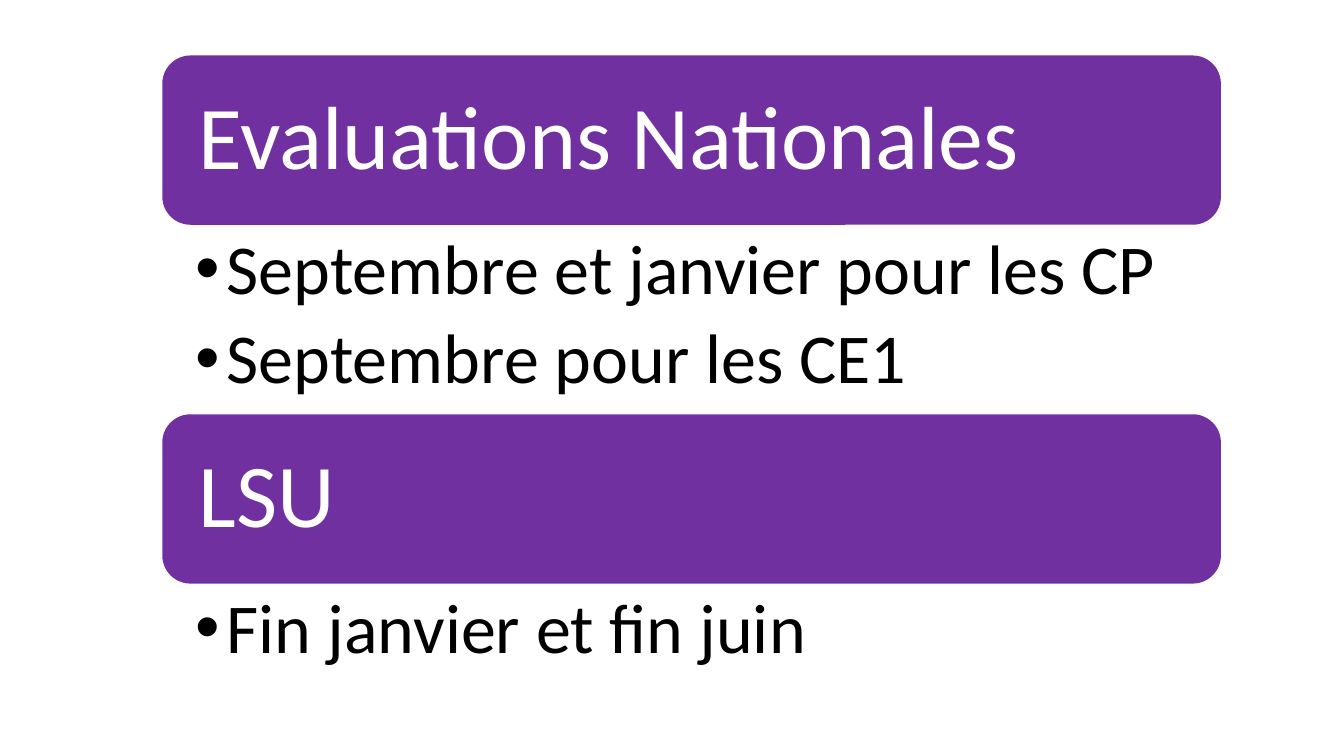
from dataclasses import dataclass

from lxml import etree
from pptx import Presentation
from pptx import util as u
from pptx.dml.color import RGBColor
from pptx.enum import shapes, text
from pptx.oxml import ns


@dataclass(frozen=True)
class Theme:
    font: str = "Calibri"
    purple: RGBColor = RGBColor(0x70, 0x30, 0xA0)
    white: RGBColor = RGBColor(255, 255, 255)
    black: RGBColor = RGBColor(0, 0, 0)
    heading_size: int = 64
    list_size: int = 50


THEME = Theme()
LEFT, TOP, WIDTH = 1.61, 0.55, 10.5
BAND_HEIGHT, BAND_INSET = 1.68, 0.09
SECTIONS = [
    (0, 2, "Evaluations Nationales",
     ["Septembre et janvier pour les CP", "Septembre pour les CE1"], 1.88),
    (3, 4, "LSU", ["Fin janvier et fin juin"], 1.16),
]


def apply(target, values):
    for name, value in values.items():
        setattr(target, name, value)


def place(shape, left, top, width, height):
    apply(shape, dict(left=u.Inches(left), top=u.Inches(top),
                      width=u.Inches(width), height=u.Inches(height)))


def write(shape, lines, frame_format, paragraph_format, font_format):
    frame = shape.text_frame
    frame.text = "\n".join(lines)
    apply(frame, dict(word_wrap=True, auto_size=text.MSO_AUTO_SIZE.NONE) | frame_format)
    for paragraph in frame.paragraphs:
        apply(paragraph, dict(alignment=text.PP_ALIGN.LEFT, line_spacing=0.9,
                              space_before=u.Pt(0)) | paragraph_format)
        for run in paragraph.runs:
            apply(run.font, dict(name=THEME.font, bold=False, size=font_format["size"]))
            run.font.color.rgb = font_format["color"]


def add_bullet(paragraph):
    properties = paragraph._p.get_or_add_pPr()
    properties.set("marL", str(u.Inches(0.31)))
    properties.set("indent", str(u.Inches(-0.31)))
    etree.SubElement(properties, ns.qn("a:buFont")).set("typeface", "Arial")
    etree.SubElement(properties, ns.qn("a:buChar")).set("char", "•")


def build_band(slide, heading, label, left, top, width, height):
    band = slide.shapes.add_shape(
        shapes.MSO_SHAPE.ROUNDED_RECTANGLE, u.Inches(left), u.Inches(top),
        u.Inches(width), u.Inches(height))
    band.shadow.inherit = False
    band.fill.solid()
    band.fill.fore_color.rgb = THEME.purple
    band.line.fill.background()
    heading.element.addprevious(band.element)
    place(heading, left + BAND_INSET, top + BAND_INSET,
          width - 2 * BAND_INSET, height - 2 * BAND_INSET)
    margin = u.Inches(0.27)
    write(heading, [label],
          dict(vertical_anchor=text.MSO_ANCHOR.MIDDLE, margin_left=margin,
               margin_right=margin, margin_top=margin, margin_bottom=margin),
          dict(space_after=u.Pt(0.35 * THEME.heading_size)),
          dict(size=u.Pt(THEME.heading_size), color=THEME.white))


def build_list(body, items, left, top, width, height):
    place(body, left, top, width, height)
    write(body, items,
          dict(vertical_anchor=text.MSO_ANCHOR.TOP,
               margin_left=u.Inches(0.33), margin_right=u.Inches(0.5),
               margin_top=u.Inches(0.09), margin_bottom=u.Inches(0.09)),
          dict(level=1, space_after=u.Pt(0.2 * THEME.list_size)),
          dict(size=u.Pt(THEME.list_size), color=THEME.black))
    for paragraph in body.text_frame.paragraphs:
        add_bullet(paragraph)


def build_slide(presentation):
    slide = presentation.slides.add_slide(
        presentation.slide_layouts.get_by_name("Comparison"))
    placeholders = {shape.placeholder_format.idx: shape for shape in slide.placeholders}
    top = TOP
    for heading_id, list_id, label, items, list_height in SECTIONS:
        build_band(slide, placeholders.pop(heading_id), label,
                   LEFT, top, WIDTH, BAND_HEIGHT)
        top += BAND_HEIGHT
        build_list(placeholders.pop(list_id), items, LEFT, top, WIDTH, list_height)
        top += list_height
    for unused in placeholders.values():
        unused.element.getparent().remove(unused.element)


def main():
    presentation = Presentation()
    apply(presentation, dict(slide_width=u.Inches(13.33), slide_height=u.Inches(7.5)))
    build_slide(presentation)
    presentation.save("out.pptx")


if __name__ == "__main__":
    main()
